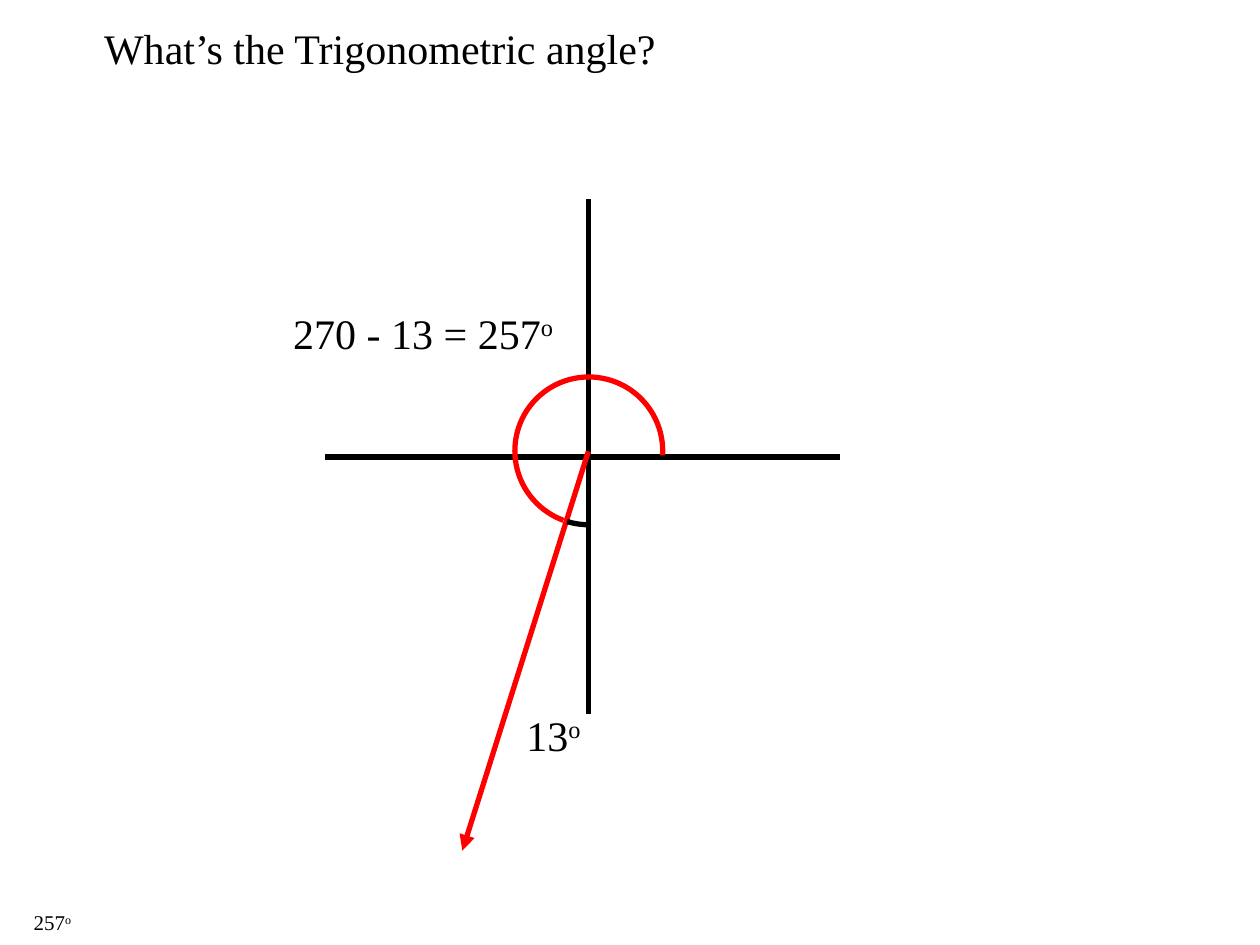
from dataclasses import dataclass

from lxml.etree import SubElement
from pptx import Presentation
from pptx.dml.color import RGBColor
from pptx.enum.shapes import MSO_CONNECTOR, MSO_SHAPE
from pptx.enum.text import MSO_AUTO_SIZE
from pptx.oxml.ns import qn
from pptx.util import Cm, Pt


@dataclass(frozen=True)
class Theme:
    font: str = "Times New Roman"
    black: RGBColor = RGBColor(0, 0, 0)
    red: RGBColor = RGBColor(255, 0, 0)
    body: int = 24
    small: int = 12
    line: int = 3


@dataclass(frozen=True)
class Label:
    text: str
    left: float
    top: float
    width: float
    height: float = 1.27
    size: int = Theme.body
    degrees: bool = True


@dataclass(frozen=True)
class Line:
    start: tuple[float, float]
    end: tuple[float, float]
    color: RGBColor = Theme.black
    arrow: bool = False


@dataclass(frozen=True)
class Arc:
    """Arc drawn clockwise; angles in degrees from the right, y downwards."""
    start: float
    end: float
    color: RGBColor


CENTER = (11.87, 9.09)
RADIUS = 1.49

LABELS = [
    Label("257", 0.43, 18.21, 1.3, 0.76, Theme.small),
    Label("What’s the Trigonometric angle?", 1.85, 0.33, 11.71, degrees=False),
    Label("13", 10.36, 14.17, 1.65),
    Label("270 - 13 = 257", 5.66, 6.07, 5.79),
]
LINES = [
    Line((6.55, 9.21), (16.94, 9.21)),
    Line((11.86, 4.02), (11.86, 14.4)),
    Line((11.86, 9.1), (9.32, 17.15), Theme.red, arrow=True),
]
ARCS = [
    Arc(110, 3.5, Theme.red),
    Arc(90, 107, Theme.black),
]


def add_run(p, text: str, *, size: int, superscript: bool = False) -> None:
    r = p.add_run()
    r.text = text
    r.font.name = Theme.font
    r.font.size = Pt(size)
    r.font.color.rgb = Theme.black
    if superscript:
        r._r.get_or_add_rPr().set("baseline", "30000")


def add_label(s, label: Label) -> None:
    sp = s.shapes.add_textbox(
        Cm(label.left), Cm(label.top), Cm(label.width), Cm(label.height))
    tf = sp.text_frame
    tf.word_wrap = False
    tf.auto_size = MSO_AUTO_SIZE.SHAPE_TO_FIT_TEXT
    p = tf.paragraphs[0]
    add_run(p, label.text, size=label.size)
    if label.degrees:
        add_run(p, "o", size=label.size, superscript=True)


def set_stroke(sp, color: RGBColor) -> None:
    sp.line.color.rgb = color
    sp.line.width = Pt(Theme.line)


def add_line(s, line: Line) -> None:
    sp = s.shapes.add_connector(
        MSO_CONNECTOR.STRAIGHT, *map(Cm, line.start + line.end))
    set_stroke(sp, line.color)
    if line.arrow:
        SubElement(sp.line._get_or_add_ln(), qn("a:tailEnd"), type="triangle")
    SubElement(sp._element.spPr, qn("a:effectLst"))


def add_arc(s, arc: Arc) -> None:
    x, y = CENTER
    sp = s.shapes.add_shape(
        MSO_SHAPE.ARC, Cm(x - RADIUS), Cm(y - RADIUS), Cm(2 * RADIUS), Cm(2 * RADIUS))
    # Angles are stored in 1/60000 degree, adjustments in 1/100000
    for i, angle in enumerate((arc.start, arc.end)):
        sp.adjustments[i] = angle * 0.6
    sp.shadow.inherit = False
    sp.fill.background()
    set_stroke(sp, arc.color)


def main() -> None:
    prs = Presentation()
    prs.slide_width, prs.slide_height = Cm(25.4), Cm(19.05)
    s = prs.slides.add_slide(prs.slide_layouts[6])
    for line in LINES:
        add_line(s, line)
    for label in LABELS:
        add_label(s, label)
    for arc in ARCS:
        add_arc(s, arc)
    prs.save("out.pptx")


if __name__ == "__main__":
    main()
